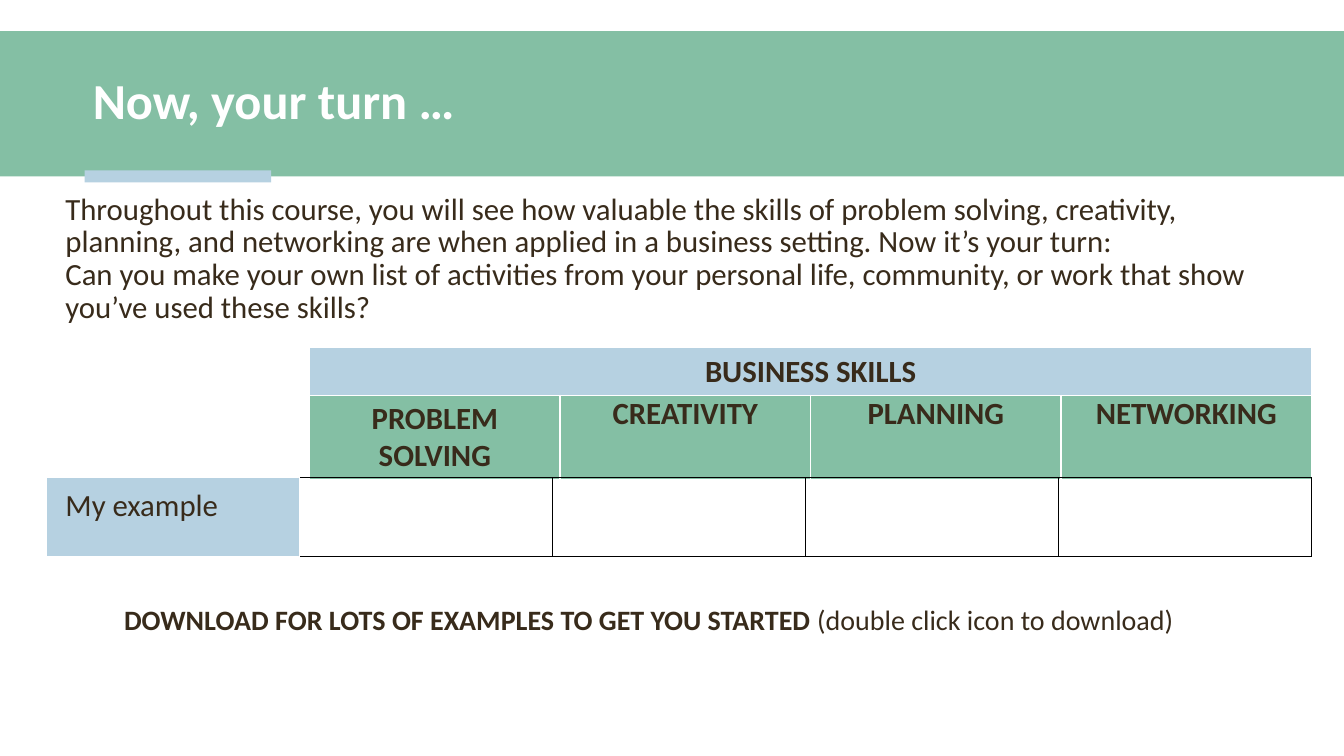
from lxml.etree import SubElement
from pptx import Presentation
from pptx.dml.color import RGBColor
from pptx.enum.shapes import MSO_SHAPE as Shape
from pptx.enum.text import MSO_ANCHOR as Anchor, PP_ALIGN as Align
from pptx.oxml.ns import qn
from pptx.util import Inches, Pt

COLORS = {"green": "84BFA4", "blue": "B6D1E1", "brown": "382B1B",
          "white": "FFFFFF", "black": "000000"}
FONT = "Calibri"
SKILLS = ["PROBLEM SOLVING", "CREATIVITY", "PLANNING", "NETWORKING"]
INTRO = [
    "Throughout this course, you will see how valuable the skills of problem solving, "
    "creativity, planning, and networking are when applied in a business setting. "
    "Now it’s your turn:",
    "Can you make your own list of activities from your personal life, community, "
    "or work that show you’ve used these skills?",
]


def color(name):
    return RGBColor.from_string(COLORS[name])


def style(font, size, color_name="brown", bold=False):
    font.name, font.size, font.bold = FONT, Pt(size), bold
    font.color.rgb = color(color_name)


def add_bar(slide, left, top, width, height, color_name):
    bar = slide.shapes.add_shape(Shape.RECTANGLE, Inches(left), Inches(top),
                                 Inches(width), Inches(height))
    bar.shadow.inherit = False
    bar.fill.solid()
    bar.fill.fore_color.rgb = color(color_name)
    bar.line.fill.background()


def add_title(slide, text):
    title = slide.shapes.title
    title.left, title.top = Inches(0.82), Inches(0.41)
    title.width, title.height = Inches(7.62), Inches(1.23)
    frame = title.text_frame
    frame.text = text
    frame.vertical_anchor = Anchor.MIDDLE
    paragraph = frame.paragraphs[0]
    paragraph.alignment = Align.LEFT
    paragraph.line_spacing = 0.9
    style(paragraph.font, 36, "white", True)
    slide.shapes._spTree.append(title._element)  # bring in front of the band


def add_text(slide, left, top, width, height, paragraphs, size, alignment=Align.LEFT):
    """Each paragraph is a list of (text, bold) runs."""
    box = slide.shapes.add_textbox(Inches(left), Inches(top), Inches(width), Inches(height))
    frame = box.text_frame
    frame.word_wrap = True
    for index, runs in enumerate(paragraphs):
        paragraph = frame.add_paragraph() if index else frame.paragraphs[0]
        paragraph.alignment = alignment
        paragraph.line_spacing = Pt(23.4)
        for text, bold in runs:
            run = paragraph.add_run()
            run.text = text
            style(run.font, size, bold=bold)


def add_grid(slide, left, top, width, row_heights, columns):
    frame = slide.shapes.add_table(len(row_heights), columns, Inches(left), Inches(top),
                                   Inches(width), Inches(sum(row_heights)))
    table = frame.table
    table.first_row = table.horz_banding = False
    for row, height in zip(table.rows, row_heights):
        row.height = Inches(height)
    return table


def format_cell(cell, fill=None, text="", bold=False, alignment=Align.LEFT,
                border="white", left_border=None):
    # Borders come before the fill in the cell properties
    properties = cell._tc.get_or_add_tcPr()
    for side in ("L", "R", "T", "B"):
        line = SubElement(properties, qn(f"a:ln{side}"), w=str(Pt(1)))
        solid = SubElement(line, qn("a:solidFill"))
        name = left_border if side == "L" and left_border else border
        SubElement(solid, qn("a:srgbClr"), val=COLORS[name])
    if fill:
        cell.fill.solid()
        cell.fill.fore_color.rgb = color(fill)
    else:
        cell.fill.background()
    cell.text = text
    paragraph = cell.text_frame.paragraphs[0]
    paragraph.alignment = alignment
    style(paragraph.font, 22, bold=bold)


def add_skills_table(slide):
    table = add_grid(slide, 3.07, 3.45, 9.94, [0.47, 0.82], len(SKILLS))
    table.cell(0, 0).merge(table.cell(0, len(SKILLS) - 1))
    for column, skill in enumerate(SKILLS):
        heading = "" if column else "BUSINESS SKILLS"
        format_cell(table.cell(0, column), "blue", heading, True, Align.CENTER)
        cell = table.cell(1, column)
        format_cell(cell, "green", skill, True, Align.CENTER)
        if column:
            cell.margin_left = cell.margin_right = Inches(0.07)
            cell.margin_top = cell.margin_bottom = 0


def add_example_table(slide):
    table = add_grid(slide, 0.46, 4.74, 12.55, [0.78], len(SKILLS) + 1)
    label = table.cell(0, 0)
    format_cell(label, "blue", "My example")
    label.margin_left, label.margin_top = Inches(0.19), Inches(0.09)
    for column in range(1, len(SKILLS) + 1):
        format_cell(table.cell(0, column), border="black",
                    left_border="white" if column == 1 else None)


def main():
    presentation = Presentation()
    presentation.slide_width, presentation.slide_height = Inches(13.33), Inches(7.5)
    slide = presentation.slides.add_slide(presentation.slide_layouts[5])

    # Title band
    add_bar(slide, 0, 0.31, 13.33, 1.44, "green")
    add_bar(slide, 0.84, 1.69, 1.85, 0.12, "blue")
    add_title(slide, "Now, your turn …")

    # Task and tables
    add_text(slide, 0.55, 1.87, 12.31, 1.48, [[(text, False)] for text in INTRO], 22)
    add_skills_table(slide)
    add_example_table(slide)

    # Download hint
    hint = [("DOWNLOAD FOR LOTS OF EXAMPLES TO GET YOU STARTED ", True),
            ("(double click icon to download)", False)]
    add_text(slide, 0.55, 5.94, 11.77, 1.29, [hint], 20, Align.CENTER)

    presentation.save("out.pptx")


if __name__ == "__main__":
    main()
